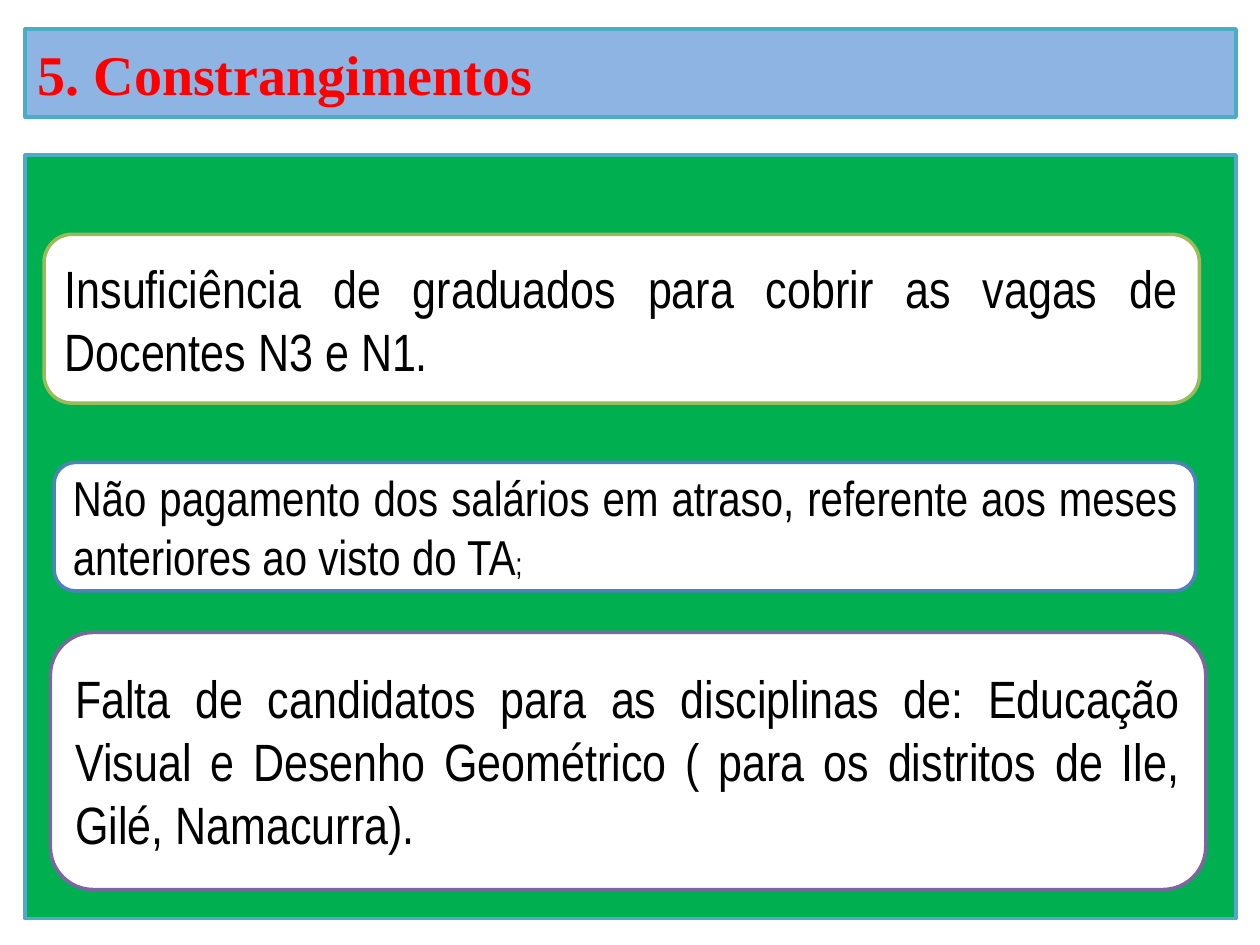
import pptx
import pptx.dml.color
import pptx.enum.shapes
import pptx.enum.text
import pptx.util

COLS, ROWS = 100, 75
WIDTH, HEIGHT = pptx.util.Inches(10), pptx.util.Inches(7.5)
COLORS = {
    "title": "8EB4E3",
    "panel": "00B050",
    "card": "FFFFFF",
    "aqua": "4BACC6",
    "olive": "9BBB59",
    "blue": "4F81BD",
    "purple": "8064A2",
    "red": "FF0000",
    "black": "000000",
}
SHAPES = pptx.enum.shapes.MSO_SHAPE
ALIGN = pptx.enum.text.PP_ALIGN


def color(name):
    return pptx.dml.color.RGBColor.from_string(COLORS[name])


def add_box(s, kind, col, row, cols, rows, fill, line):
    sp = s.shapes.add_shape(
        kind,
        round(WIDTH * col / COLS),
        round(HEIGHT * row / ROWS),
        round(WIDTH * cols / COLS),
        round(HEIGHT * rows / ROWS),
    )
    sp.shadow.inherit = False
    sp.fill.solid()
    sp.fill.fore_color.rgb = color(fill)
    sp.line.color.rgb = color(line)
    sp.line.width = pptx.util.Pt(2)
    return sp


def add_band(s, row, rows, fill):
    return add_box(s, SHAPES.RECTANGLE, 2, row, 96.1, rows, fill, "aqua")


def format_run(r, size, font, ink, bold=False):
    r.font.size = pptx.util.Pt(size)
    r.font.name = font
    r.font.bold = bold
    r.font.color.rgb = color(ink)


def write(sp, text, align, size, font, ink, bold=False):
    tf = sp.text_frame
    tf.word_wrap = True
    tf.vertical_anchor = pptx.enum.text.MSO_ANCHOR.MIDDLE
    p = tf.paragraphs[0]
    p.text = text
    p.alignment = align
    format_run(p.runs[0], size, font, ink, bold)
    return p


def add_card(s, col, row, cols, rows, line, text, size):
    sp = add_box(s, SHAPES.ROUNDED_RECTANGLE, col, row, cols, rows, "card", line)
    return write(sp, text, ALIGN.JUSTIFY, size, "Arial Narrow", "black")


def main():
    prs = pptx.Presentation()
    prs.slide_width, prs.slide_height = WIDTH, HEIGHT
    s = prs.slides.add_slide(prs.slide_layouts[6])

    title = add_band(s, 2.3, 7, "title")
    write(title, "5. Constrangimentos", ALIGN.LEFT, 32, "Times New Roman", "red", True)
    add_band(s, 12.3, 60.6, "panel")

    add_card(s, 3.5, 18.6, 91.7, 13.4, "olive",
             "Insuficiência de graduados para cobrir as vagas de Docentes N3 e N1.", 30)
    add_card(s, 4, 50.2, 91.7, 20.4, "purple",
             "Falta de candidatos para as disciplinas de: Educação Visual e Desenho "
             "Geométrico ( para os distritos de Ile, Gilé, Namacurra).", 30)
    p = add_card(s, 4.3, 36.7, 90.6, 10.2, "blue",
                 "Não pagamento dos salários em atraso, referente aos meses "
                 "anteriores ao visto do TA", 28)
    r = p.add_run()
    r.text = ";"
    format_run(r, 18, "Arial Narrow", "black")

    prs.save("out.pptx")


if __name__ == "__main__":
    main()
